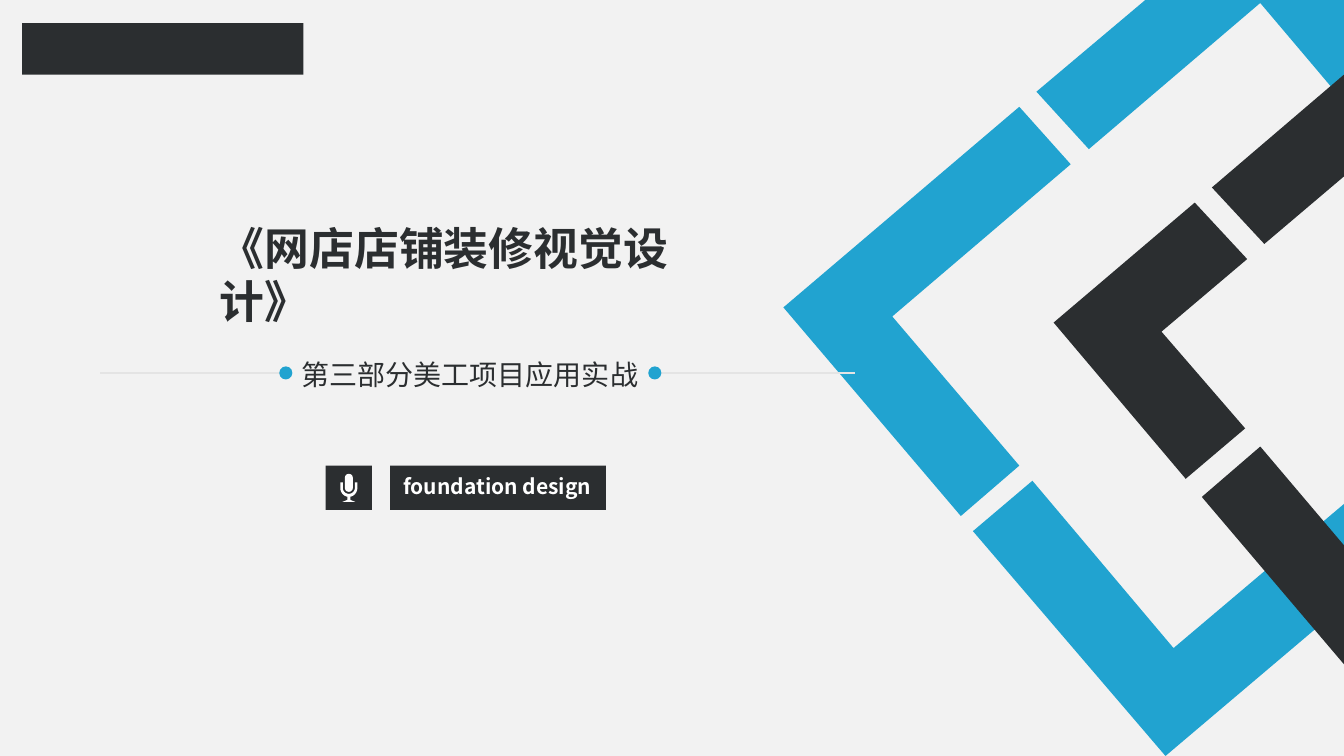
import math
import pptx
import pptx.util
import pptx.dml.color
import pptx.enum.shapes
import pptx.enum.text
import pptx.oxml.ns
import lxml.etree

BLUE = pptx.dml.color.RGBColor(0x21, 0xA3, 0xD0)
DARK = pptx.dml.color.RGBColor(0x2B, 0x2E, 0x30)
PALE = pptx.dml.color.RGBColor(0xF2, 0xF2, 0xF2)
GREY = pptx.dml.color.RGBColor(0xE4, 0xE4, 0xE4)
WHITE = pptx.dml.color.RGBColor(0xFF, 0xFF, 0xFF)
FONT = "Noto Sans CJK SC"
SHAPE = pptx.enum.shapes.MSO_SHAPE
ALIGN = pptx.enum.text.PP_ALIGN

prs = pptx.Presentation()
prs.slide_width = pptx.util.Inches(13.33)
prs.slide_height = pptx.util.Inches(7.5)
COLS, ROWS = 133.3, 75
COL = prs.slide_width / COLS
ROW = prs.slide_height / ROWS

s = prs.slides.add_slide(prs.slide_layouts[5])
s.background.fill.solid()
s.background.fill.fore_color.rgb = PALE


def paint(sp, color):
    sp.shadow.inherit = False
    sp.fill.solid()
    sp.fill.fore_color.rgb = color
    sp.line.fill.background()


def write(sp, box, text, size, color, bold, align):
    x, y, w, h = box
    sp.left, sp.width = round(x * COL), round(w * COL)
    sp.top, sp.height = round(y * ROW), round(h * ROW)
    tf = sp.text_frame
    tf.word_wrap = True
    tf.auto_size = pptx.enum.text.MSO_AUTO_SIZE.NONE
    tf.vertical_anchor = pptx.enum.text.MSO_ANCHOR.TOP
    p = tf.paragraphs[0]
    p.alignment = align
    p.line_spacing = pptx.util.Pt(round(size * 1.2))
    r = p.add_run()
    r.text = text
    r.font.size = pptx.util.Pt(size)
    r.font.bold = bold
    r.font.color.rgb = color
    r.font.name = FONT
    ea = lxml.etree.SubElement(r._r.get_or_add_rPr(), pptx.oxml.ns.qn("a:ea"))
    ea.set("typeface", FONT)


blue_frame = [
    [(102.4, 47.7), (116.4, 64.3), (COLS, 50), (COLS, 60), (115.6, 75), (96.5, 52.7)],
    [(101.1, 10.6), (106.2, 16.3), (88.5, 31.4), (101.1, 46.2), (95.3, 51.2), (77.7, 30.5)],
    [(113.6, 0), (COLS, 0), (COLS, 10.2), (132.1, 8.7), (125, 0.3), (108, 14.8), (102.8, 9.1)],
]
dark_frame = [
    [(125, 44.3), (COLS, 54.1), (COLS, 65.9), (119.2, 49.3)],
    [(118.5, 20.1), (123.7, 25.7), (115.2, 32.9), (123.5, 42.5), (117.6, 47.5), (104.5, 32)],
    [(COLS, 7.4), (COLS, 17.5), (125.4, 24.2), (120.2, 18.6)],
]
bars = [
    (2.2, 2.3, 27.9, 5.1),
    (32.3, 46.2, 4.6, 4.4),
    (38.7, 46.2, 21.4, 4.4),
]
mic_x, mic_y = 34.6, 48.4
arc = [math.radians(a) for a in range(0, 181, 15)]
cradle = [(mic_x + 0.85 * math.cos(a), mic_y + 0.9 * math.sin(a)) for a in arc]
cradle += [(mic_x - 0.85, 47.85), (mic_x - 0.6, 47.85)]
cradle += [(mic_x + 0.6 * math.cos(a), mic_y + 0.6 * math.sin(a)) for a in reversed(arc)]
cradle += [(mic_x + 0.6, 47.85), (mic_x + 0.85, 47.85)]
stand = [(mic_x + dx, y) for dx, y in
         [(-0.15, 49.2), (0.15, 49.2), (0.15, 49.6), (0.65, 49.8), (-0.65, 49.8), (-0.15, 49.6)]]

for x, y, w, h in bars:
    sp = s.shapes.add_shape(SHAPE.RECTANGLE, round(x * COL), round(y * ROW), round(w * COL), round(h * ROW))
    paint(sp, DARK)

for outlines, color in [(blue_frame, BLUE), (dark_frame, DARK), ([cradle], WHITE), ([stand], WHITE)]:
    (x, y), *rest = outlines[0]
    fb = s.shapes.build_freeform(round(x * COL), round(y * ROW))
    fb.add_line_segments([(round(x * COL), round(y * ROW)) for x, y in rest])
    for (x, y), *rest in outlines[1:]:
        fb.move_to(round(x * COL), round(y * ROW))
        fb.add_line_segments([(round(x * COL), round(y * ROW)) for x, y in rest])
    paint(fb.convert_to_shape(), color)

sp = s.shapes.add_shape(SHAPE.ROUNDED_RECTANGLE, round((mic_x - 0.4) * COL), round(47 * ROW),
                        round(0.8 * COL), round(1.8 * ROW))
sp.adjustments[0] = 0.5
paint(sp, WHITE)

rule_y, dot = 37, 1.3
for start, end, dot_x in [(28, 9.9, 27.7), (65.6, 84.8, 64.3)]:
    line = s.shapes.add_connector(pptx.enum.shapes.MSO_CONNECTOR.STRAIGHT, round(start * COL),
                                  round(rule_y * ROW), round(end * COL), round(rule_y * ROW))
    line.line.color.rgb = GREY
    line.line.width = pptx.util.Pt(1.5)
    lxml.etree.SubElement(line._element.spPr, pptx.oxml.ns.qn("a:effectLst"))
    sp = s.shapes.add_shape(SHAPE.OVAL, round(dot_x * COL), round((rule_y - dot / 2) * ROW),
                            round(dot * COL), round(dot * ROW))
    paint(sp, BLUE)

write(s.shapes.title, (20.8, 21.4, 53.5, 11.7), "《网店店铺装修视觉设计》", 32, DARK, True, ALIGN.LEFT)
for box, text, size, color, bold, align in [
    ((28.9, 35, 35.4, 4.4), "第三部分美工项目应用实战", 20, DARK, False, ALIGN.CENTER),
    ((39, 46.5, 23.5, 3.5), "foundation design", 15, WHITE, True, ALIGN.LEFT),
]:
    write(s.shapes.add_textbox(0, 0, 0, 0), box, text, size, color, bold, align)

prs.save("out.pptx")
